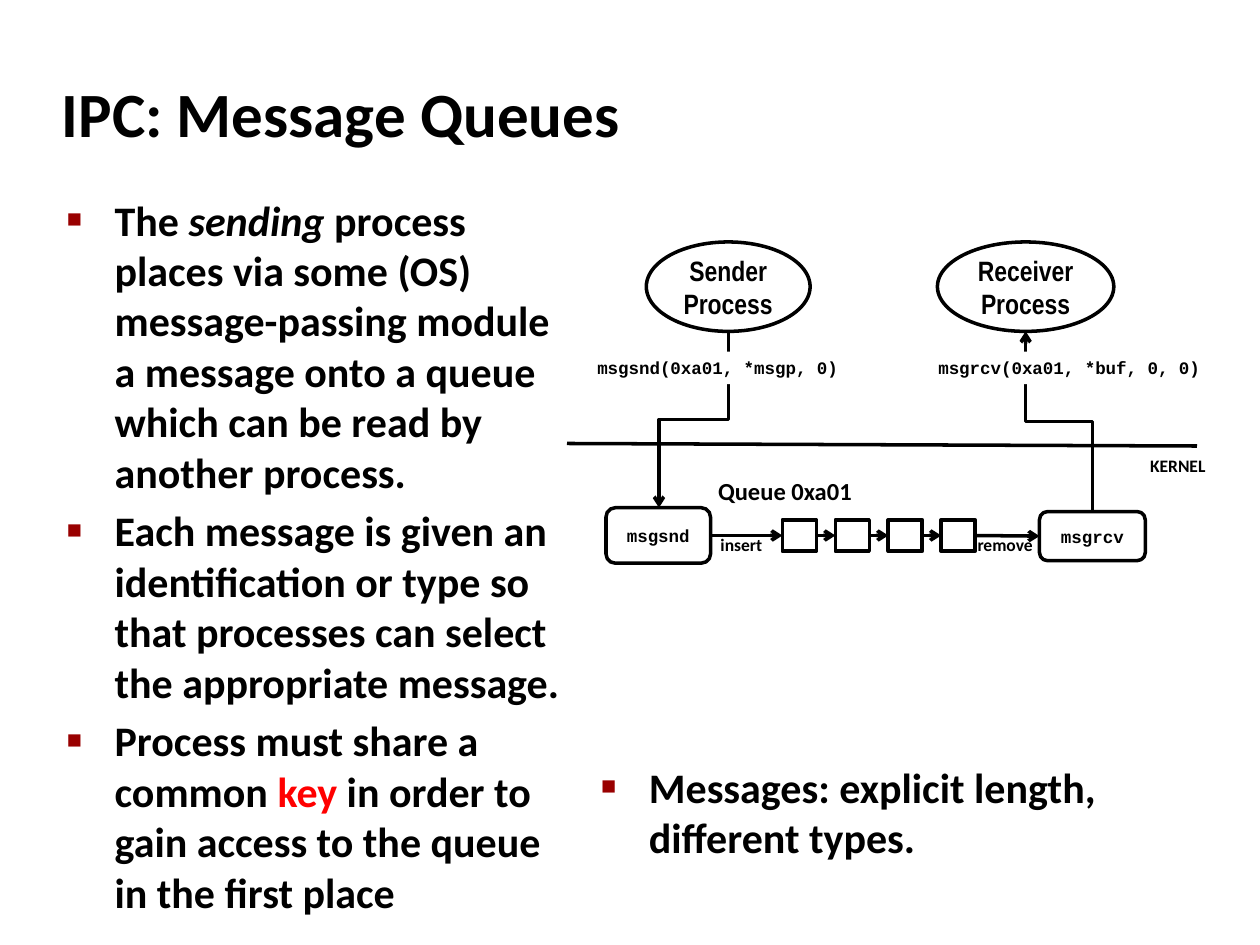
from dataclasses import dataclass

from lxml.etree import SubElement
from pptx import Presentation
from pptx.dml.color import RGBColor
from pptx.enum.shapes import MSO_CONNECTOR as Link, MSO_SHAPE as Shape
from pptx.enum.text import MSO_ANCHOR as Anchor, MSO_AUTO_SIZE as AutoSize, PP_ALIGN as Align
from pptx.oxml.ns import qn
from pptx.util import Inches, Pt

TOP, LEFT, BOTTOM, RIGHT = range(4)


@dataclass(frozen=True)
class Theme:
    ink: str = "000000"
    paper: str = "FFFFFF"
    bullet: str = "990000"
    accent: str = "FF0000"
    sans: str = "Calibri"
    narrow: str = "Arial Narrow"
    mono: str = "Courier New"
    title: int = 36
    body: int = 24
    process: int = 16
    caption: int = 14
    small: int = 10
    stroke: int = 2


THEME = Theme()
BULLETS = [
    [("The ", ""), ("sending", "italic"),
     (" process places via some (OS) message-passing module a message onto a queue "
      "which can be read by another process.", "")],
    [("Each message is given an identification or type so that processes can select "
      "the appropriate message.", "")],
    [("Process must share a common ", ""), ("key", "accent"),
     (" in order to gain access to the queue in the first place", "")],
]
MESSAGES = [[("Messages: explicit length, different types.", "")]]


def color(value):
    return RGBColor.from_string(value)


def place(shape, box):
    shape.left, shape.top, shape.width, shape.height = map(Inches, box)


def style(para, size, face=THEME.sans):
    font = para.font
    font.name, font.size, font.bold = face, Pt(size), True
    font.color.rgb = color(THEME.ink)


def add_title(page, text, box):
    title = page.shapes.title
    place(title, box)
    frame = title.text_frame
    frame.text = text
    frame.vertical_anchor = Anchor.MIDDLE
    frame.auto_size = AutoSize.NONE
    para = frame.paragraphs[0]
    para.alignment = Align.LEFT
    style(para, THEME.title)


def add_bullet_mark(para):
    props = para._p.get_or_add_pPr()
    props.set("marL", str(Inches(0.38)))
    props.set("indent", str(Inches(-0.38)))
    SubElement(SubElement(props, qn("a:buClr")), qn("a:srgbClr"), val=THEME.bullet)
    SubElement(props, qn("a:buSzPct"), val="60000")
    SubElement(props, qn("a:buFont"), typeface="Arial")
    SubElement(props, qn("a:buChar"), char="■")


def fill_list(holder, items, box):
    place(holder, box)
    frame = holder.text_frame
    frame.auto_size = AutoSize.NONE
    for index, item in enumerate(items):
        para = frame.add_paragraph() if index else frame.paragraphs[0]
        add_bullet_mark(para)
        para.space_before = Pt(0.2 * THEME.body)
        style(para, THEME.body)
        for text, kind in item:
            span = para.add_run()
            span.text = text
            if kind == "italic":
                span.font.italic = True
            elif kind == "accent":
                span.font.color.rgb = color(THEME.accent)


def add_node(page, kind, box, lines=(), size=THEME.small, face=THEME.mono, outlined=True):
    node = page.shapes.add_shape(kind, *map(Inches, box))
    node.shadow.inherit = False
    if outlined:
        node.fill.background()
        node.line.color.rgb = color(THEME.ink)
        node.line.width = Pt(THEME.stroke)
    else:
        node.fill.solid()
        node.fill.fore_color.rgb = color(THEME.paper)
        node.line.fill.background()
    if lines:
        frame = node.text_frame
        frame.word_wrap = False
        frame.vertical_anchor = Anchor.MIDDLE
        para = frame.paragraphs[0]
        para.alignment = Align.CENTER
        for index, line in enumerate(lines):
            if index:
                para.add_line_break()
            para.add_run().text = line
        style(para, size, face)
    return node


def add_caption(page, text, box, size=THEME.small):
    caption = page.shapes.add_textbox(*map(Inches, box))
    frame = caption.text_frame
    frame.word_wrap = False
    frame.text = text
    style(frame.paragraphs[0], size)


def add_line(page, start, end, kind=Link.STRAIGHT, arrow=True):
    line = page.shapes.add_connector(kind, *map(Inches, (*start, *end)))
    line.line.color.rgb = color(THEME.ink)
    line.line.width = Pt(THEME.stroke)
    if arrow:
        SubElement(line.line._get_or_add_ln(), qn("a:tailEnd"), type="arrow")
    SubElement(line._element.spPr, qn("a:effectLst"))
    return line


def join(page, source, target):
    line = add_line(page, (0, 0), (1, 1))
    line.begin_connect(source, RIGHT)
    line.end_connect(target, LEFT)


def add_vertical_elbow(page, start, end):
    (x1, y1), (x2, y2) = start, end
    middle_x, middle_y = (x1 + x2) / 2, (y1 + y2) / 2
    half_run, half_rise = abs(y2 - y1) / 2, (x1 - x2) / 2
    down = y2 > y1
    drop = half_rise if down else -half_rise
    line = add_line(page, (middle_x - half_run, middle_y - drop),
                    (middle_x + half_run, middle_y + drop), Link.ELBOW)
    line._element.spPr.find(qn("a:xfrm")).set("rot", str((90 if down else 270) * 60000))


def add_diagram(page):
    for name, box in (("Sender", (5.13, 1.92, 1.3, 0.71)),
                      ("Receiver", (7.44, 1.92, 1.4, 0.71))):
        add_node(page, Shape.OVAL, box, (name, "Process"), THEME.process, THEME.narrow)
    slots = [add_node(page, Shape.RECTANGLE, (6.21 + 0.42 * column, 4.125, 0.27, 0.25))
             for column in range(4)]
    send = add_node(page, Shape.ROUNDED_RECTANGLE, (4.81, 4.03, 0.83, 0.44), ["msgsnd"])
    receive = add_node(page, Shape.ROUNDED_RECTANGLE, (8.25, 4.06, 0.84, 0.39), ["msgrcv"])
    chain = [send, *slots, receive]
    for source, target in zip(chain, chain[1:]):
        join(page, source, target)
    add_vertical_elbow(page, (5.78, 2.63), (5.23, 4.03))
    add_vertical_elbow(page, (8.67, 4.06), (8.14, 2.63))
    add_line(page, (4.5, 3.52), (9.5, 3.54), arrow=False)
    add_caption(page, "Queue 0xa01", (5.6, 3.73, 1.28, 0.34), THEME.caption)
    add_caption(page, "insert", (5.62, 4.19, 0.54, 0.27))
    add_caption(page, "remove", (7.66, 4.19, 0.65, 0.27))
    add_caption(page, "KERNEL", (9.03, 3.56, 0.65, 0.27))
    for text, left in (("msgsnd(0xa01, *msgp, 0)", 4.49),
                       ("msgrcv(0xa01, *buf, 0, 0)", 7.28)):
        add_node(page, Shape.ROUNDED_RECTANGLE, (left, 2.79, 2.41, 0.26), [text],
                 outlined=False)


def main():
    deck = Presentation()
    deck.slide_width, deck.slide_height = Inches(10), Inches(7.5)
    page = deck.slides.add_slide(deck.slide_layouts.get_by_name("Two Content"))
    add_title(page, "IPC: Message Queues", (0.39, 0.48, 8.3, 0.83))
    fill_list(page.placeholders[1], BULLETS, (0.43, 1.49, 4.23, 5.44))
    fill_list(page.placeholders[2], MESSAGES, (4.67, 5.99, 4.23, 1.02))
    add_diagram(page)
    deck.save("out.pptx")


if __name__ == "__main__":
    main()
